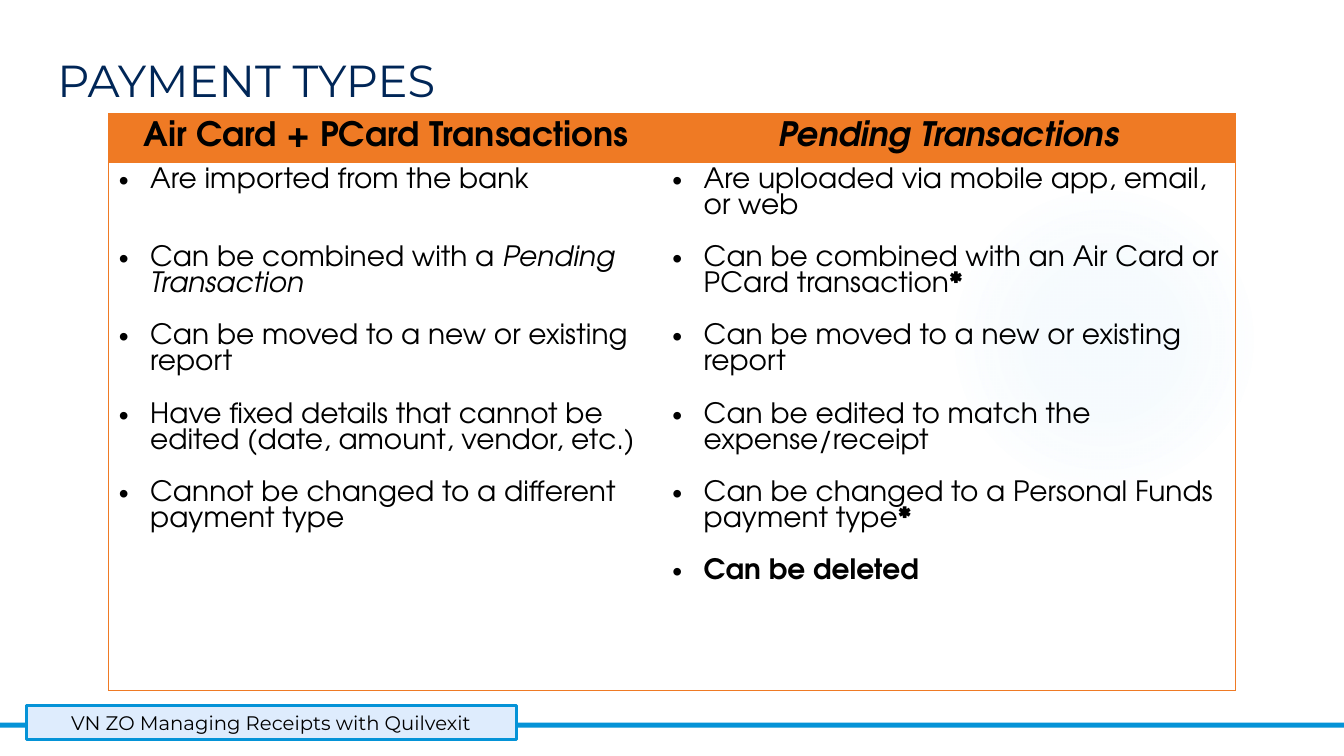
from lxml import etree
from pptx import Presentation
from pptx.dml.color import RGBColor
from pptx.enum.shapes import MSO_SHAPE
from pptx.enum.text import MSO_ANCHOR, PP_ALIGN
from pptx.oxml import parse_xml
from pptx.oxml.ns import nsdecls, qn
from pptx.util import Inches, Pt

LEFT, CENTER = PP_ALIGN.LEFT, PP_ALIGN.CENTER
MIDDLE = MSO_ANCHOR.MIDDLE
RECT, OVAL = MSO_SHAPE.RECTANGLE, MSO_SHAPE.OVAL

NAVY = RGBColor(0x00, 0x26, 0x57)
ORANGE = RGBColor(0xEF, 0x7A, 0x24)
BLACK = RGBColor(0x00, 0x00, 0x00)
BLUE = RGBColor(0x05, 0x93, 0xD7)
PALE = RGBColor(0xDE, 0xEC, 0xFD)
GLOW = RGBColor(0x7A, 0xC4, 0xF0)

SANS, ROUND = "Montserrat", "TeX Gyre Adventor"
PITCH = 18.65  # line height of the list text, in points
INDENT = Inches(0.31)

HEADS = [("Air Card + PCard Transactions", "b"), ("Pending Transactions", "bi")]
LISTS = [
    [
        [("Are imported from the bank", "")],
        [("Can be combined with a ", ""), ("Pending Transaction", "i")],
        [("Can be moved to a new or existing report", "")],
        [("Have fixed details that cannot be edited (date, amount, vendor, etc.)", "")],
        [("Cannot be changed to a different payment type", "")],
    ],
    [
        [("Are uploaded via mobile app, email, or web", "")],
        [("Can be combined with an Air Card or PCard transaction", ""), ("*", "b")],
        [("Can be moved to a new or existing report", "")],
        [("Can be edited to match the expense/receipt", "")],
        [("Can be changed to a Personal Funds payment type", ""), ("*", "b")],
        [("Can be deleted", "b")],
    ],
]


def write(para, runs, font=ROUND, size=20, color=BLACK, align=LEFT,
          pitch=None, before=0, bullet=False):
    """Fill a paragraph with (text, style) runs; style holds b and/or i."""
    if bullet:
        props = para._p.get_or_add_pPr()
        props.set("marL", str(INDENT))
        props.set("indent", str(-INDENT))
        etree.SubElement(props, qn("a:buFont")).set("typeface", "Arial")
        etree.SubElement(props, qn("a:buChar")).set("char", "•")
    para.alignment = align
    if pitch:
        para.line_spacing = Pt(pitch)
    if before:
        para.space_before = Pt(before)
    for text, style in runs:
        run = para.add_run()
        run.text = text
        run.font.name, run.font.size = font, Pt(size)
        run.font.bold, run.font.italic = "b" in style, "i" in style
        run.font.color.rgb = color


def shape(slide, kind, box, fill, line=None):
    part = slide.shapes.add_shape(kind, *map(Inches, box))
    part.shadow.inherit = False
    part.fill.solid()
    part.fill.fore_color.rgb = fill
    if line:
        part.line.color.rgb, part.line.width = line, Pt(2.25)
    else:
        part.line.fill.background()
    return part


def glow(slide, box):
    """Soft round light that fades to nothing."""
    part = shape(slide, OVAL, box, GLOW)
    stops = "".join(
        f'<a:gs pos="{pos * 1000}"><a:srgbClr val="{GLOW}">'
        f'<a:alpha val="{alpha * 1000}"/></a:srgbClr></a:gs>'
        for pos, alpha in [(0, 7), (36, 6), (69, 0), (100, 0)])
    grad = parse_xml(
        f'<a:gradFill {nsdecls("a")} rotWithShape="1"><a:gsLst>{stops}</a:gsLst>'
        '<a:path path="circle"><a:fillToRect l="50000" t="50000" r="50000" '
        'b="50000"/></a:path></a:gradFill>')
    solid = part._element.spPr.find(qn("a:solidFill"))
    solid.getparent().replace(solid, grad)


def title(slide, box):
    area = slide.shapes.add_textbox(*map(Inches, box))
    frame = area.text_frame
    frame.word_wrap = True
    frame.vertical_anchor = MIDDLE
    frame.margin_left = Inches(0.22)
    write(frame.paragraphs[0], [("PAYMENT TYPES", "")], SANS, 32, NAVY)


def border(cell, sides):
    """Draw the named sides in orange and clear the others."""
    props = cell._tc.get_or_add_tcPr()
    for side in "LRTB":
        line = etree.SubElement(props, qn(f"a:ln{side}"), w=str(Pt(0.75)))
        if side in sides:
            fill = etree.SubElement(line, qn("a:solidFill"))
            etree.SubElement(fill, qn("a:srgbClr")).set("val", str(ORANGE))
        else:
            etree.SubElement(line, qn("a:noFill"))


def table(slide, box, widths, heights):
    grid = slide.shapes.add_table(2, 2, *map(Inches, box)).table
    grid.first_row = grid.horz_banding = False
    for row, high in zip(grid.rows, heights):
        row.height = Inches(high)
    for col, (wide, head, items, edge) in enumerate(zip(widths, HEADS, LISTS, "LR")):
        grid.columns[col].width = Inches(wide)
        top, body = grid.cell(0, col), grid.cell(1, col)
        border(top, edge + "TB")
        border(body, edge + "TB")
        top.fill.solid()
        top.fill.fore_color.rgb = ORANGE
        body.fill.background()
        write(top.text_frame.paragraphs[0], [head], size=24, align=CENTER, pitch=24)
        frame = body.text_frame
        for num, runs in enumerate(items):
            para = frame.add_paragraph() if num else frame.paragraphs[0]
            gap = PITCH * min(num, 1)
            if num == 1 and col == 0:
                gap *= 2  # keeps both lists level after the one-line item
            write(para, runs, pitch=PITCH, before=gap, bullet=True)


def footer(slide, box):
    left, top, wide, high = box
    shape(slide, RECT, (left, top + 0.17, wide, 0.05), BLUE)
    label = shape(slide, RECT, (left + 0.26, top, 4.86, high), PALE, BLUE)
    label.text_frame.vertical_anchor = MIDDLE
    write(label.text_frame.paragraphs[0],
          [("VN ZO Managing Receipts with Quilvexit", "")], SANS, 14, align=CENTER)


def main():
    deck = Presentation()
    deck.slide_width, deck.slide_height = Inches(13.33), Inches(7.5)
    slide = deck.slides.add_slide(deck.slide_layouts[6])
    glow(slide, (9.41, 1.83, 3.08, 3.08))
    title(slide, (0.35, 0.46, 12.55, 0.66))
    table(slide, (1.08, 1.13, 11.17, 5.72), (5.49, 5.68), (0.48, 5.24))
    footer(slide, (0, 7, 13.33, 0.34))
    deck.save("out.pptx")


if __name__ == "__main__":
    main()
